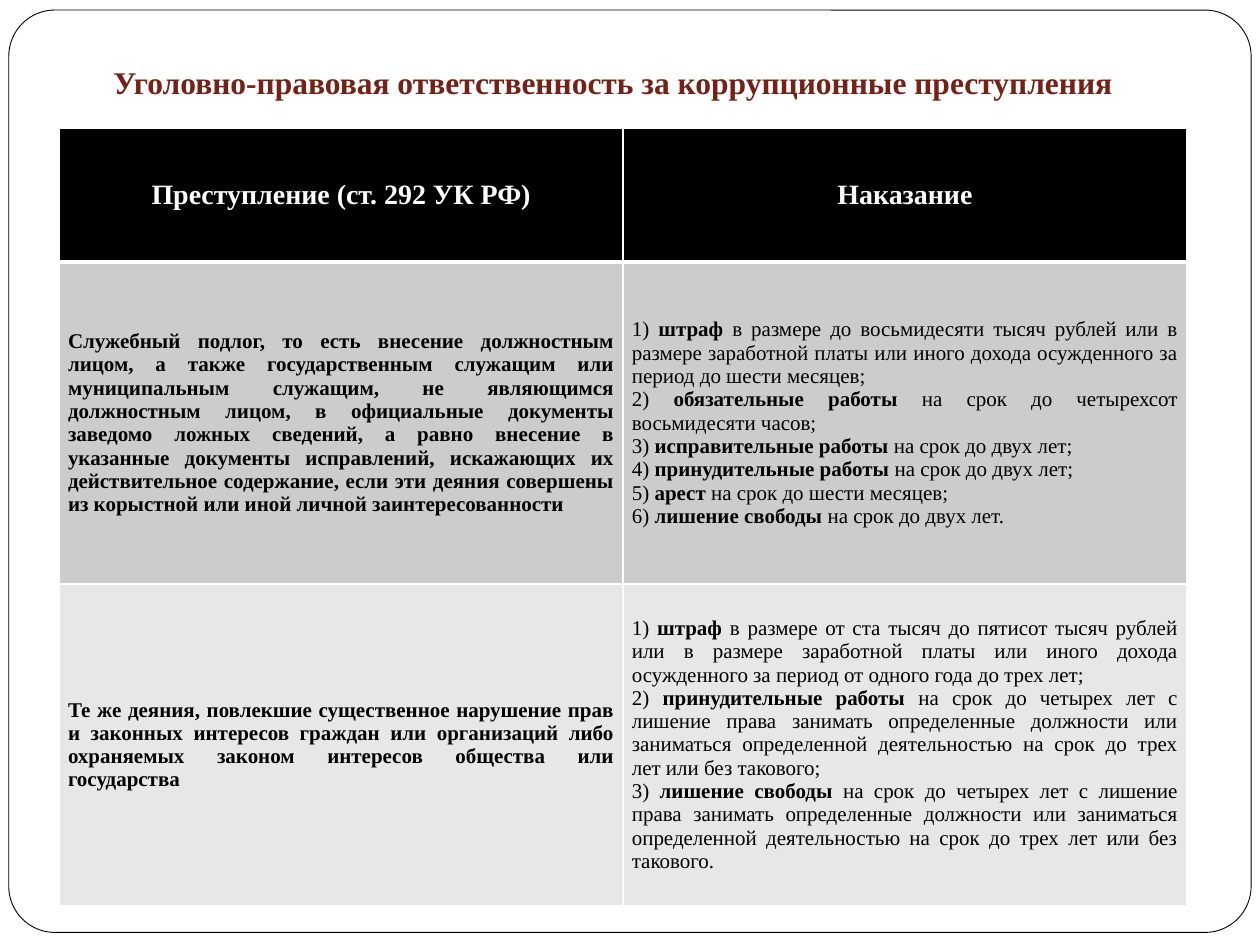
from dataclasses import dataclass

from lxml import etree
from pptx import Presentation
from pptx.dml.color import RGBColor
from pptx.enum.shapes import MSO_SHAPE
from pptx.enum.text import MSO_ANCHOR, PP_ALIGN
from pptx.oxml.ns import qn
from pptx.util import Inches, Pt

ROUNDED = MSO_SHAPE.ROUNDED_RECTANGLE
MIDDLE, BOTTOM = MSO_ANCHOR.MIDDLE, MSO_ANCHOR.BOTTOM
CENTER, JUSTIFY = PP_ALIGN.CENTER, PP_ALIGN.JUSTIFY


@dataclass(frozen=True)
class Theme:
    """Colours, font and type sizes of the slide."""
    font: str = "Times New Roman"
    white: str = "FFFFFF"
    black: str = "000000"
    title: str = "742217"
    bands: tuple = ("CCCCCC", "E7E7E7")
    title_size: int = 18
    header_size: int = 16
    body_size: int = 12


THEME = Theme()

TITLE = "Уголовно-правовая ответственность за коррупционные преступления"
HEADERS = ("Преступление (ст. 292 УК РФ)", "Наказание")
BAN = ("на срок до четырех лет с лишение права занимать определенные должности "
       "или заниматься определенной деятельностью на срок до трех лет или без такового")
OFFENCES = [
    ("Служебный подлог, то есть внесение должностным лицом, а также государственным "
     "служащим или муниципальным служащим, не являющимся должностным лицом, в официальные "
     "документы заведомо ложных сведений, а равно внесение в указанные документы "
     "исправлений, искажающих их действительное содержание, если эти деяния совершены "
     "из корыстной или иной личной заинтересованности",
     [("штраф", "в размере до восьмидесяти тысяч рублей или в размере заработной платы "
                "или иного дохода осужденного за период до шести месяцев;"),
      ("обязательные работы", "на срок до четырехсот восьмидесяти часов;"),
      ("исправительные работы", "на срок до двух лет;"),
      ("принудительные работы", "на срок до двух лет;"),
      ("арест", "на срок до шести месяцев;"),
      ("лишение свободы", "на срок до двух лет.")]),
    ("Те же деяния, повлекшие существенное нарушение прав и законных интересов граждан "
     "или организаций либо охраняемых законом интересов общества или государства",
     [("штраф", "в размере от ста тысяч до пятисот тысяч рублей или в размере заработной "
                "платы или иного дохода осужденного за период от одного года до трех лет;"),
      ("принудительные работы", BAN + ";"),
      ("лишение свободы", BAN + ".")]),
]


def rgb(color):
    """Turn a hex string into a colour."""
    return RGBColor.from_string(color)


def write(p, runs, size, color, align):
    """Fill a paragraph with (text, bold) runs in one style."""
    p.alignment = align
    p.font.name, p.font.size = THEME.font, Pt(size)
    p.font.color.rgb = rgb(color)
    for text, bold in runs:
        r = p.add_run()
        r.text, r.font.bold = text, bold


def style_cell(cell, fill, bottom=1):
    """Give a cell its white borders, fill and middle anchor."""
    tc_pr = cell._tc.get_or_add_tcPr()
    for side, width in (("L", 1), ("R", 1), ("T", 1), ("B", bottom)):
        ln = etree.SubElement(tc_pr, qn(f"a:ln{side}"), w=str(Pt(width)))
        solid = etree.SubElement(ln, qn("a:solidFill"))
        etree.SubElement(solid, qn("a:srgbClr"), val=THEME.white)
    cell.fill.solid()
    cell.fill.fore_color.rgb = rgb(fill)
    cell.vertical_anchor = MIDDLE


def body_cell(cell, fill, paragraphs):
    """Write justified paragraphs into a body cell."""
    style_cell(cell, fill)
    cell.margin_left = cell.margin_right = Inches(0.07)
    cell.margin_top = cell.margin_bottom = 0
    tf = cell.text_frame
    for i, runs in enumerate(paragraphs):
        p = tf.add_paragraph() if i else tf.paragraphs[0]
        write(p, runs, THEME.body_size, THEME.black, JUSTIFY)


def add_frame(s, x, y, w, h):
    """Draw the rounded outline around the slide."""
    sp = s.shapes.add_shape(ROUNDED, x, y, w, h)
    sp.adjustments[0] = 0.05
    sp.shadow.inherit = False
    sp.fill.solid()
    sp.fill.fore_color.rgb = rgb(THEME.white)
    sp.line.color.rgb = rgb(THEME.black)
    sp.line.width = Pt(0.5)


def add_title(s, x, y, w, h):
    """Place the centred heading."""
    tf = s.shapes.add_textbox(x, y, w, h).text_frame
    tf.word_wrap = True
    tf.vertical_anchor = BOTTOM
    tf.margin_bottom = Inches(0.1)
    write(tf.paragraphs[0], [(TITLE, True)], THEME.title_size, THEME.title, CENTER)


def add_penalties(s, x, y, w, h):
    """Build the table of offences and their penalties."""
    table = s.shapes.add_table(len(OFFENCES) + 1, len(HEADERS), x, y, w, h).table
    header_height = Inches(1.06)
    table.rows[0].height = header_height
    for cell, text in zip(table.rows[0].cells, HEADERS):
        style_cell(cell, THEME.black, bottom=3)
        write(cell.text_frame.paragraphs[0], [(text, True)],
              THEME.header_size, THEME.white, CENTER)
    for i, (offence, penalties) in enumerate(OFFENCES):
        row, fill = i + 1, THEME.bands[i % 2]
        table.rows[row].height = (h - header_height) // len(OFFENCES)
        body_cell(table.cell(row, 0), fill, [[(offence, True)]])
        body_cell(table.cell(row, 1), fill,
                  [[(f"{n}) ", False), (name, True), (f" {terms}", False)]
                   for n, (name, terms) in enumerate(penalties, 1)])


def main():
    """Build and save the slide."""
    prs = Presentation()
    prs.slide_width, prs.slide_height = Inches(10), Inches(7.5)
    s = prs.slides.add_slide(prs.slide_layouts[6])
    add_frame(s, Inches(0.07), Inches(0.08), Inches(9.86), Inches(7.32))
    add_penalties(s, Inches(0.47), Inches(1.02), Inches(8.95), Inches(6.17))
    add_title(s, Inches(0.39), Inches(0.39), Inches(8.95), Inches(0.51))
    prs.save("out.pptx")


if __name__ == "__main__":
    main()
